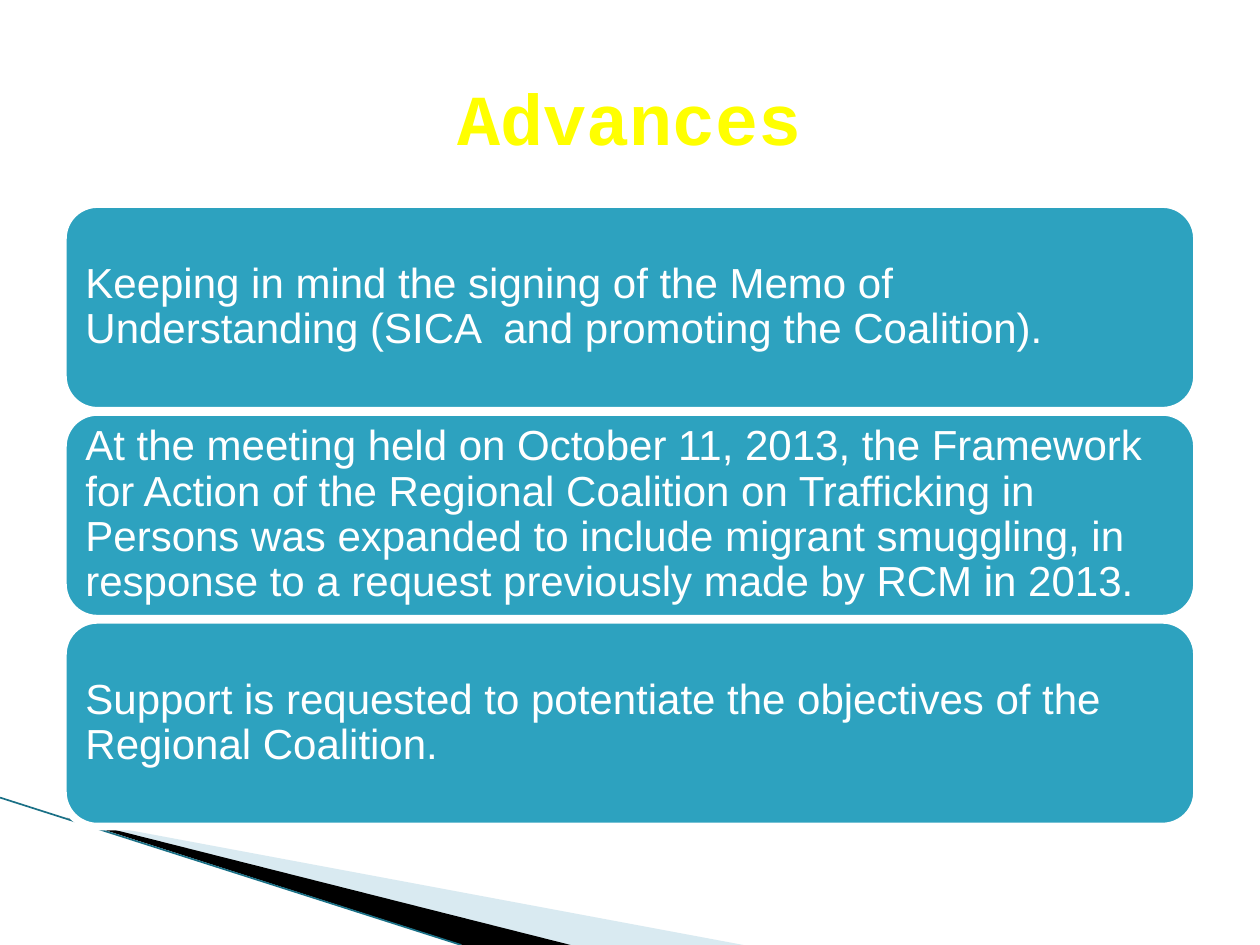
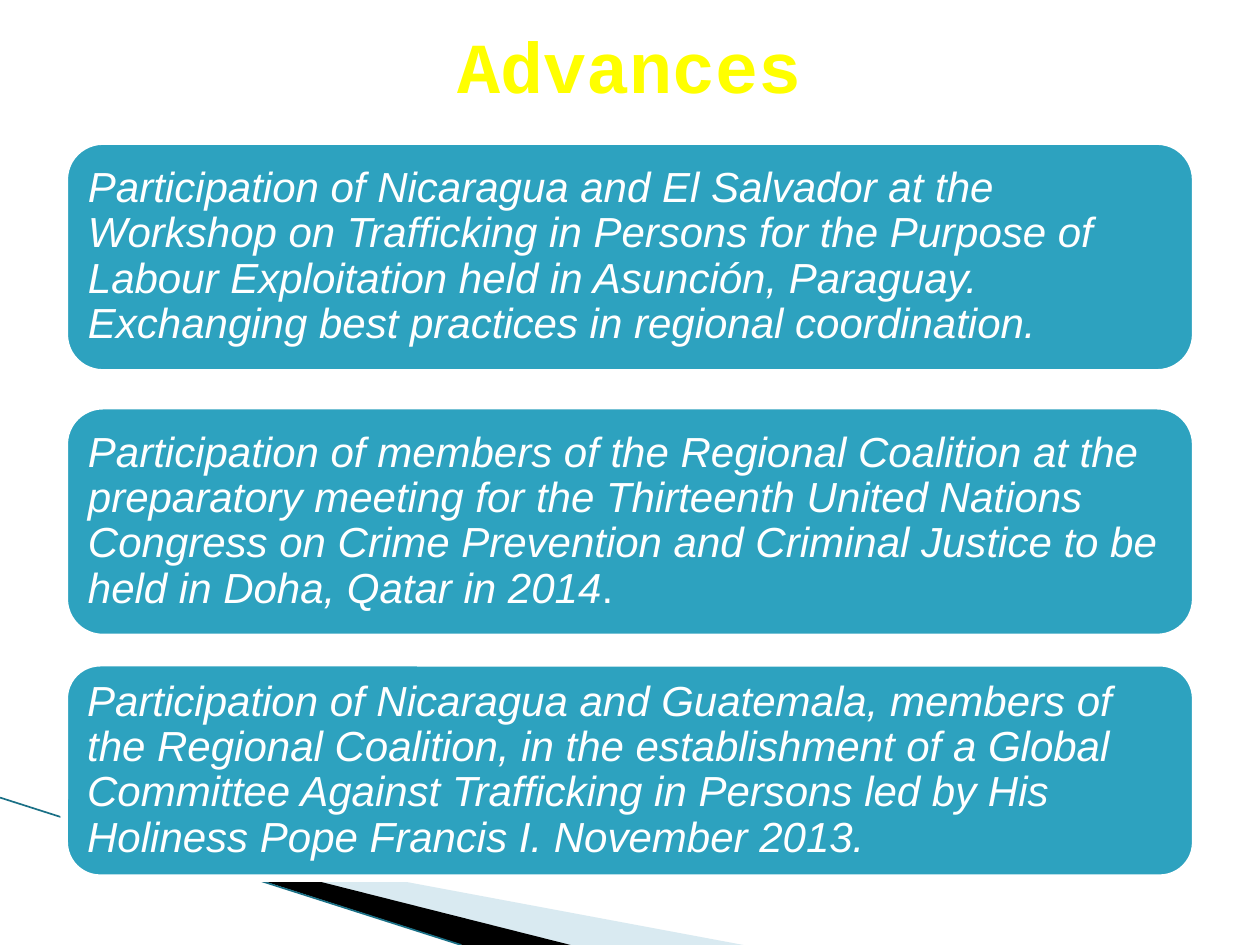
from lxml import etree
from pptx import Presentation
from pptx import util as u
from pptx.dml.color import RGBColor
from pptx.enum import shapes, text
from pptx.oxml.ns import qn

TEAL, WHITE, YELLOW = "2DA2BF", "FFFFFF", "FFFF00"
PALE, BLACK, EDGE = "A0CBDC", "000000", "1A7086"


def paint(color_format, hex_color):
    """Colour a fill or a font from a hex string."""
    target = color_format
    if hasattr(color_format, "solid"):
        color_format.solid()
        target = color_format.fore_color
    target.rgb = RGBColor.from_string(hex_color)


deck = Presentation()
deck.slide_width, deck.slide_height = u.Inches(10), u.Inches(7.5)
layout = deck.slide_layouts[5]

# Each page: title top, then boxes as (top, height, text spans with italic flag)
pages = [
    (0.3, 0.5, [
        (1.62, 1.64, [("Keeping in mind the signing of the Memo of Understanding "
                       "(SICA  and promoting the Coalition).", False)]),
        (3.27, 1.64, [("At the meeting held on October 11, 2013, the Framework for "
                       "Action of the Regional Coalition on Trafficking in Persons was "
                       "expanded to include migrant smuggling, in response to a request "
                       "previously made by RCM in 2013.", False)]),
        (4.92, 1.64, [("Support is requested to potentiate the objectives of the "
                       "Regional Coalition.", False)]),
    ]),
    (-0.11, 0.51, [
        (1.12, 1.84, [("Participation of Nicaragua and El Salvador at the Workshop on "
                       "Trafficking in Persons for the Purpose of Labour Exploitation "
                       "held in Asunción, Paraguay. Exchanging best practices in "
                       "regional coordination.", True)]),
        (3.22, 1.84, [("Participation of members of the Regional Coalition at the "
                       "preparatory meeting for the Thirteenth United Nations Congress "
                       "on Crime Prevention and Criminal Justice to be held in Doha, "
                       "Qatar in 2014", True), (".", False)]),
        (5.26, 1.71, [("Participation of Nicaragua and Guatemala, members of the "
                       "Regional Coalition, in the establishment of a Global Committee "
                       "Against Trafficking in Persons led by His Holiness Pope "
                       "Francis I. November 2013.", True)]),
    ]),
]

for number, (title_top, box_left, boxes) in enumerate(pages):
    page = deck.slides.add_slide(layout)

    # Corner wedges and edge line, made once and moved to the shared layout
    if number == 0:
        for color, points in [(PALE, [(0.55, 6.5), (5.9, 7.5), (4.52, 7.5)]),
                              (BLACK, [(0.53, 6.49), (4.53, 7.5), (3.67, 7.5)])]:
            corners = [(u.Inches(x), u.Inches(y)) for x, y in points]
            builder = page.shapes.build_freeform(*corners[0])
            builder.add_line_segments(corners[1:], close=True)
            wedge = builder.convert_to_shape()
            wedge.shadow.inherit = False
            wedge.line.fill.background()
            paint(wedge.fill, color)
            if color == PALE:
                tint = wedge.element.spPr.find(".//" + qn("a:srgbClr"))
                etree.SubElement(tint, qn("a:alpha"), val="40000")
            layout.shapes.element.append(wedge.element)

        edge = page.shapes.add_connector(
            shapes.MSO_CONNECTOR.STRAIGHT,
            u.Inches(0), u.Inches(6.33), u.Inches(3.66), u.Inches(7.5))
        paint(edge.line.fill, EDGE)
        edge.line.width = u.Pt(0.95)
        etree.SubElement(edge.element.spPr, qn("a:effectLst"))
        layout.shapes.element.append(edge.element)

    # Title
    title = page.shapes.title
    title.left, title.top = u.Inches(0.5), u.Inches(title_top)
    title.width, title.height = u.Inches(9), u.Inches(1.25)
    title.text_frame.text = "Advances"
    title.text_frame.vertical_anchor = text.MSO_ANCHOR.MIDDLE
    para = title.text_frame.paragraphs[0]
    para.alignment = text.PP_ALIGN.CENTER
    para.font.name, para.font.size, para.font.bold = "Courier New", u.Pt(41), True
    paint(para.font.color, YELLOW)

    # Stacked rounded boxes, centred across the page
    for top, height, spans in boxes:
        box = page.shapes.add_shape(
            shapes.MSO_SHAPE.ROUNDED_RECTANGLE, u.Inches(box_left), u.Inches(top),
            u.Inches(10 - 2 * box_left), u.Inches(height))
        box.shadow.inherit = False
        paint(box.fill, TEAL)
        paint(box.line.fill, WHITE)
        box.line.width = u.Pt(4.33)

        frame = box.text_frame
        frame.word_wrap = True
        frame.vertical_anchor = text.MSO_ANCHOR.MIDDLE
        frame.margin_left = frame.margin_right = u.Inches(0.1)
        frame.margin_top = frame.margin_bottom = u.Inches(0.1)
        para = frame.paragraphs[0]
        para.alignment = text.PP_ALIGN.LEFT
        para.line_spacing = 0.9
        para.font.name, para.font.size = "Arial", u.Pt(24)
        paint(para.font.color, WHITE)
        for words, italic in spans:
            span = para.add_run()
            span.text = words
            span.font.italic = italic

deck.save("out.pptx")
